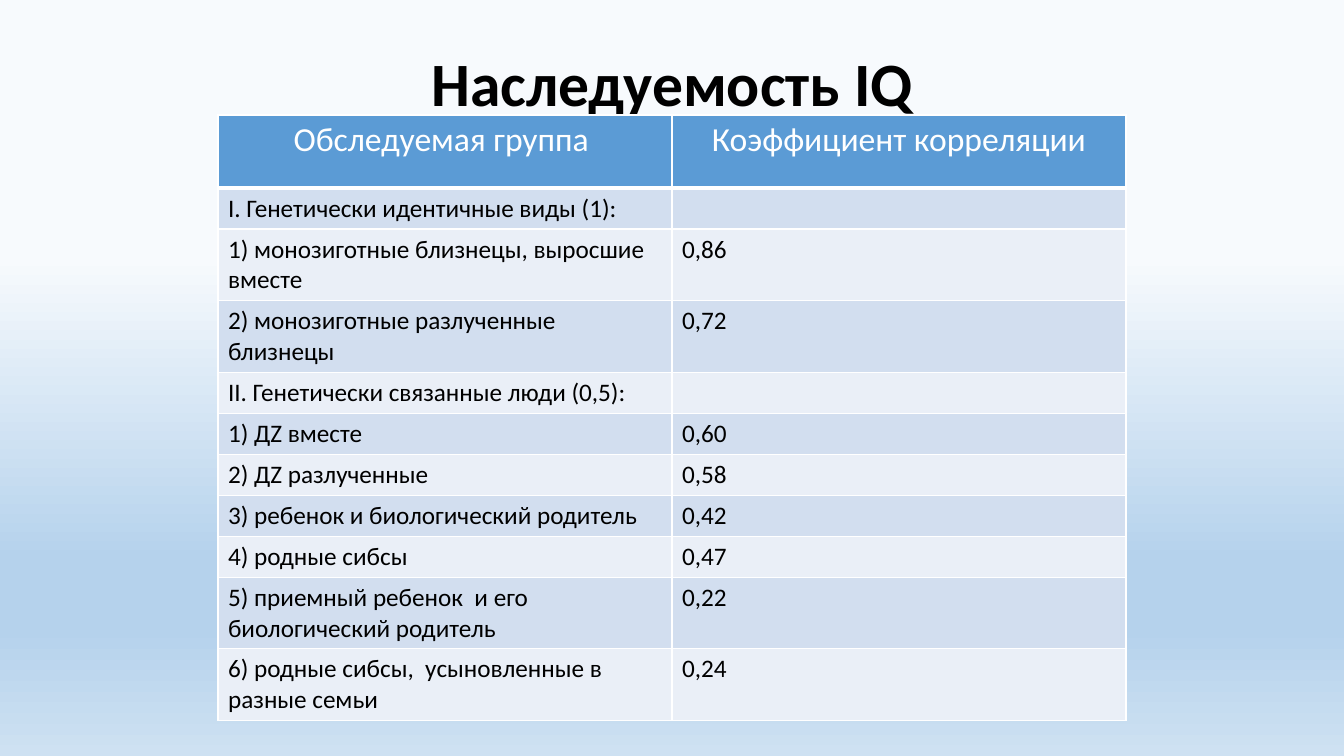
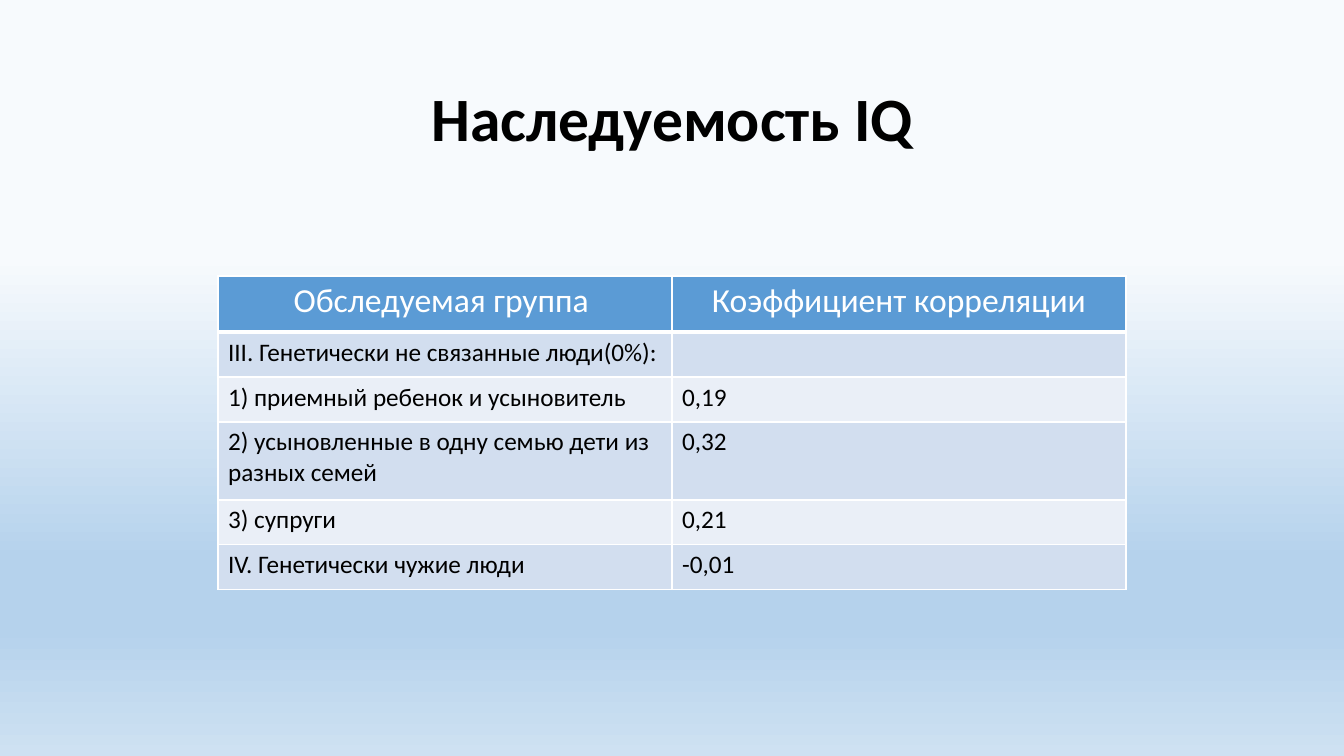
"""Builds two slides with tables on the heritability of IQ."""
from lxml.etree import SubElement as Sub
from pptx import Presentation
from pptx.dml.color import RGBColor as RGB
from pptx.enum.text import MSO_ANCHOR as Anchor, MSO_AUTO_SIZE as Fit, PP_ALIGN as Align
from pptx.oxml.ns import qn
from pptx.util import Pt

SCALE = 914400 / 100.8
WIDE, HIGH = 1344, 756
LEFT, COL = 218, 454
FONT = "Calibri"
BLACK = RGB(0x00, 0x00, 0x00)
WHITE = RGB(0xFF, 0xFF, 0xFF)
BLUE = RGB(0x5B, 0x9B, 0xD5)
BANDS = (RGB(0xEA, 0xEF, 0xF7), RGB(0xD2, 0xDE, 0xEF))
PALE = RGB(0xF7, 0xFA, 0xFD)
SKY = RGB(0xB5, 0xD2, 0xEC)
MIST = RGB(0xCE, 0xE1, 0xF2)
STOPS = ((34, PALE), (74, SKY), (83, SKY), (100, MIST))
TITLE = {"name": FONT, "size": Pt(44), "bold": True}
HEAD = {"name": FONT, "size": Pt(24), "bold": False}
BODY = {"name": FONT, "size": Pt(18), "bold": False}

NAME = "Наследуемость IQ"
TOP_ROW = ("Обследуемая группа ", "Коэффициент корреляции")
KIN = (
    (73, TOP_ROW),
    (41, ("I. Генетически идентичные виды (1):", "")),
    (71, ("1) монозиготные близнецы, выросшие вместе", "0,86")),
    (71, ("2) монозиготные разлученные близнецы", "0,72")),
    (41, ("II. Генетически связанные люди (0,5):", "")),
    (41, ("1) ДZ вместе", "0,60")),
    (41, ("2) ДZ разлученные", "0,58")),
    (41, ("3) ребенок и биологический родитель", "0,42")),
    (41, ("4) родные сибсы", "0,47")),
    (71, ("5) приемный ребенок  и его биологический родитель", "0,22")),
    (71, ("6) родные сибсы,  усыновленные в разные семьи", "0,24")),
)
OTHERS = (
    (56, TOP_ROW),
    (45, ("III. Генетически не связанные люди(0%):", "")),
    (45, ("1) приемный ребенок и усыновитель", "0,19")),
    (78, ("2) усыновленные в одну семью дети из разных семей", "0,32")),
    (45, ("3) супруги", "0,21")),
    (45, ("IV. Генетически чужие люди", "-0,01")),
)


def px(num):
    return round(num * SCALE)


def put(item, vals):
    for key, val in vals.items():
        setattr(item, key, val)


def paint(master):
    fill = master.background.fill
    fill.gradient()
    fill.gradient_angle = 270
    stops = master.element.cSld.find(".//" + qn("a:gsLst"))
    for old in list(stops):
        stops.remove(old)
    for pos, tone in STOPS:
        stop = Sub(stops, qn("a:gs"), pos=str(pos * 1000))
        Sub(stop, qn("a:srgbClr"), val=str(tone))


def write(frame, text, font, tone, align):
    frame.text = text
    para = frame.paragraphs[0]
    para.alignment = align
    put(para.font, font)
    para.font.color.rgb = tone
    return para


def add_title(slide, top, high):
    title = slide.shapes.title
    put(title, {"left": px(93), "top": px(top), "width": px(1159), "height": px(high)})
    frame = title.text_frame
    put(frame, {"vertical_anchor": Anchor.MIDDLE, "auto_size": Fit.NONE, "word_wrap": True})
    write(frame, NAME, TITLE, BLACK, Align.CENTER).line_spacing = 0.9


def edge(cell, base):
    props = cell._tc.get_or_add_tcPr()
    for side, wide in (("L", 1), ("R", 1), ("T", 1), ("B", base)):
        line = Sub(props, qn("a:ln" + side), w=str(Pt(wide)))
        Sub(Sub(line, qn("a:solidFill")), qn("a:srgbClr"), val=str(WHITE))


def add_grid(slide, top, rows):
    high = sum(size for size, _ in rows)
    grid = slide.shapes.add_table(
        len(rows), 2, px(LEFT), px(top), px(2 * COL), px(high)).table
    for col in grid.columns:
        col.width = px(COL)
    for num, (size, texts) in enumerate(rows):
        grid.rows[num].height = px(size)
        if num == 0:
            style, tone, base = (HEAD, WHITE, Align.CENTER), BLUE, 3
        else:
            style, tone, base = (BODY, BLACK, Align.LEFT), BANDS[num % 2], 1
        for cell, text in zip(grid.rows[num].cells, texts):
            edge(cell, base)
            cell.fill.solid()
            cell.fill.fore_color.rgb = tone
            write(cell.text_frame, text, *style)


def main():
    deck = Presentation()
    put(deck, {"slide_width": px(WIDE), "slide_height": px(HIGH)})
    paint(deck.slide_master)
    for head, top, rows in (((40, 94), 115, KIN), ((49, 146), 276, OTHERS)):
        slide = deck.slides.add_slide(deck.slide_layouts.get_by_name("Title Only"))
        add_title(slide, *head)
        add_grid(slide, top, rows)
    deck.save("out.pptx")


if __name__ == "__main__":
    main()
